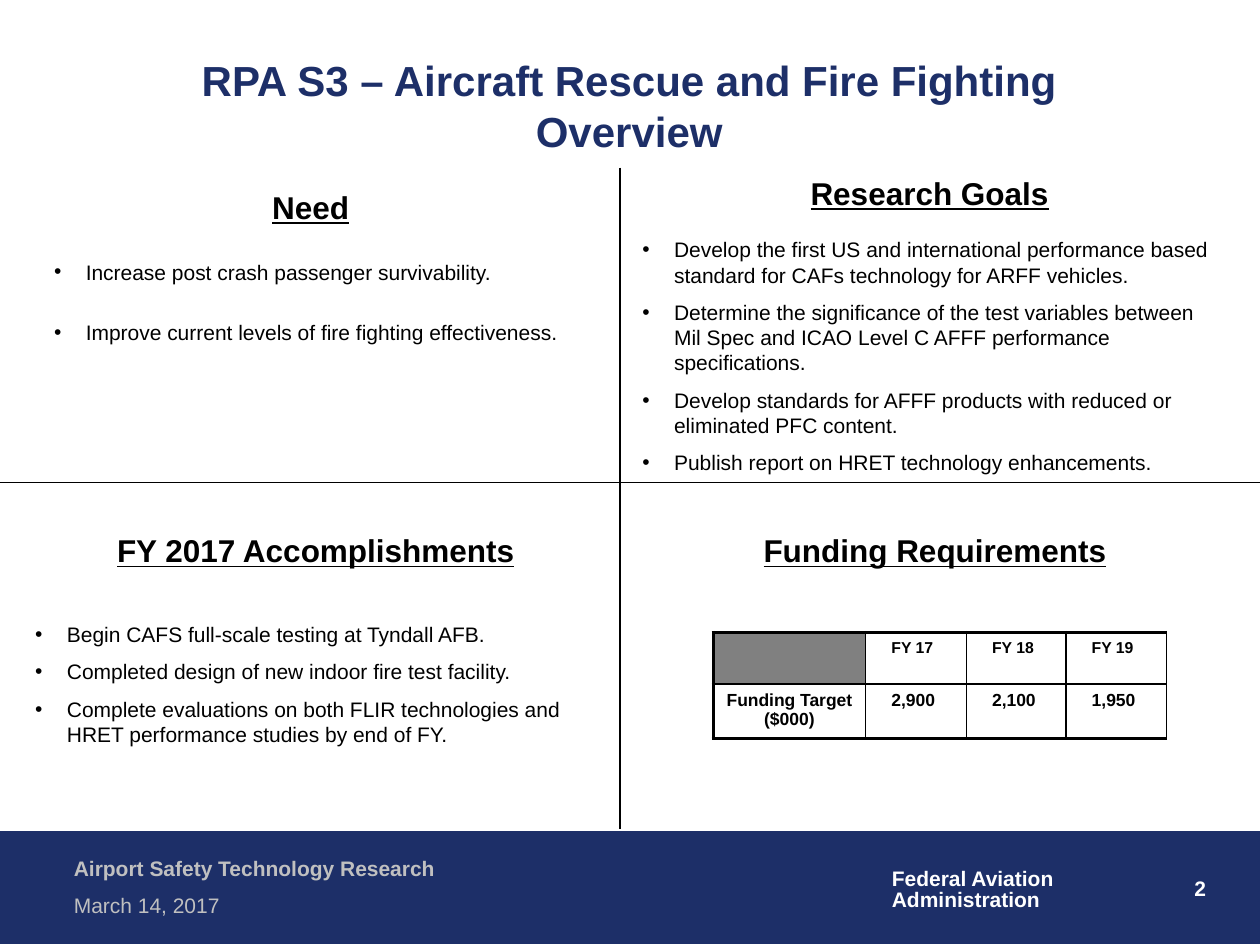
from typing import NamedTuple

from lxml.etree import SubElement
from pptx import Presentation
from pptx.dml.color import RGBColor
from pptx.enum.shapes import MSO_CONNECTOR, MSO_SHAPE
from pptx.enum.text import MSO_ANCHOR, MSO_AUTO_SIZE, PP_ALIGN
from pptx.oxml.ns import qn
from pptx.util import Cm, Pt

NAVY = RGBColor(0x1D, 0x2F, 0x68)
BLACK = RGBColor(0, 0, 0)
WHITE = RGBColor(0xFF, 0xFF, 0xFF)
SILVER = RGBColor(0xC0, 0xC0, 0xC0)
GRAY = RGBColor(0x80, 0x80, 0x80)
FONT = "Arial"
TITLE_ONLY = 5
THICK, THIN = 2.25, 1


class Box(NamedTuple):
    """A rectangle in centimetres."""
    left: float
    top: float
    width: float
    height: float

    def inner(self, dx, dy, width, height):
        return Box(self.left + dx, self.top + dy, width, height)

    def lengths(self):
        return [Cm(value) for value in self]


PAGE = Box(0, 0, 25.4, 19.05)
BODY_TOP, MIDDLE_X, MIDDLE_Y, BAND_TOP = 3.38, 12.5, 9.73, 16.76


def add_bullet(para):
    props = para._p.get_or_add_pPr()
    props.set("marL", str(Cm(0.64)))
    props.set("indent", str(-Cm(0.64)))
    SubElement(props, qn("a:buFont"), typeface=FONT)
    SubElement(props, qn("a:buChar"), char="•")


def write(frame, lines, size=12, color=BLACK, bold=False, underline=False,
          align=PP_ALIGN.LEFT, gap=0, spacing=None, bullet=False):
    """Fill a text frame with one paragraph for each line."""
    for index, line in enumerate(lines):
        para = frame.paragraphs[0] if index == 0 else frame.add_paragraph()
        para.text = line
        para.alignment = align
        para.space_before = Pt(gap if index else 0)
        if spacing:
            para.line_spacing = spacing
        if bullet:
            add_bullet(para)
        for span in para.runs:
            font = span.font
            font.name, font.size = FONT, Pt(size)
            font.bold, font.underline = bold, underline
            font.color.rgb = color


def add_text(page, box, *lines, wrap=True, **style):
    frame = page.shapes.add_textbox(*box.lengths()).text_frame
    frame.word_wrap = wrap
    write(frame, lines, **style)


def add_heading(page, box, text, align=PP_ALIGN.CENTER):
    add_text(page, box, text, size=18, bold=True, underline=True, align=align)


def add_title(page, box, text):
    title = page.shapes.title
    title.left, title.top, title.width, title.height = box.lengths()
    frame = title.text_frame
    frame.auto_size = MSO_AUTO_SIZE.NONE
    frame.vertical_anchor = MSO_ANCHOR.MIDDLE
    write(frame, [text], size=24, color=NAVY, bold=True, align=PP_ALIGN.CENTER)


def add_line(page, x1, y1, x2, y2):
    line = page.shapes.add_connector(
        MSO_CONNECTOR.STRAIGHT, Cm(x1), Cm(y1), Cm(x2), Cm(y2))
    line.line.color.rgb = BLACK
    line.line.width = Pt(0.75)
    SubElement(line._element.spPr, qn("a:effectLst"))


def add_footer(page, box):
    band = page.shapes.add_shape(MSO_SHAPE.RECTANGLE, *box.lengths())
    band.shadow.inherit = False
    band.fill.solid()
    band.fill.fore_color.rgb = NAVY
    band.line.color.rgb = NAVY
    band.line.width = Pt(0.75)
    add_text(page, box.inner(1.24, 0.36, 13.28, 0.76),
             "Airport Safety Technology Research", color=SILVER, bold=True)
    add_text(page, box.inner(1.24, 1.1, 10.39, 0.76), "March 14, 2017", color=SILVER)
    add_text(page, box.inner(17.73, 0.64, 3.81, 1.12), "Federal Aviation",
             "Administration", wrap=False, color=WHITE, bold=True, spacing=0.85)
    add_text(page, box.inner(19.28, 0.77, 5.28, 1.27), "2",
             color=WHITE, bold=True, align=PP_ALIGN.RIGHT)


def add_need(page, box):
    add_heading(page, box.inner(1.4, 0.28, 9.73, 0.85), "Need")
    add_text(page, box.inner(0.84, 1.72, 11.63, 2), 
             "Increase post crash passenger survivability.",
             "Improve current levels of fire fighting effectiveness.",
             bullet=True, gap=20)


def add_goals(page, box):
    add_heading(page, box.inner(0.84, 0, 10.8, 0.85), "Research Goals")
    add_text(page, box.inner(0.2, 1.27, 12.27, 4.62),
             "Develop the first US and international performance based "
             "standard for CAFs technology for ARFF vehicles.",
             "Determine the significance of the test variables between "
             "Mil Spec and ICAO Level C AFFF performance specifications.",
             "Develop standards for AFFF products with reduced or "
             "eliminated PFC content.",
             "Publish report on HRET technology enhancements.",
             bullet=True, gap=7)


def add_accomplishments(page, box):
    add_heading(page, box.inner(2.11, 0.86, 10.59, 0.97),
                "FY 2017 Accomplishments", align=PP_ALIGN.LEFT)
    add_text(page, box.inner(0.46, 2.67, 11.63, 2.82),
             "Begin CAFS full-scale testing at Tyndall AFB.",
             "Completed design of new indoor fire test facility.",
             "Complete evaluations on both FLIR technologies and "
             "HRET performance studies by end of FY.",
             bullet=True, gap=7)


def set_borders(cell, **widths):
    """Draw black borders; the keys are L, R, T and B, in that order."""
    props = cell._tc.get_or_add_tcPr()
    for side, width in widths.items():
        line = SubElement(props, qn(f"a:ln{side}"), w=str(Pt(width)))
        fill = SubElement(line, qn("a:solidFill"))
        SubElement(fill, qn("a:srgbClr"), val=str(BLACK))


def add_funding(page, box):
    add_heading(page, box.inner(0.84, 0.86, 11.02, 1.37), "Funding Requirements")
    rows = [["", "FY 17", "FY 18", "FY 19"],
            ["Funding Target ($000)", "2,900", "2,100", "1,950"]]
    widths, heights = [3.07, 2.03, 2.01, 2.03], [1.04, 1.09]
    area = box.inner(1.88, 3.02, sum(widths), sum(heights))
    table = page.shapes.add_table(len(rows), len(widths), *area.lengths()).table
    table.first_row = table.horz_banding = False
    for column, width in zip(table.columns, widths):
        column.width = Cm(width)
    for r, (texts, height) in enumerate(zip(rows, heights)):
        table.rows[r].height = Cm(height)
        for c, text in enumerate(texts):
            cell = table.cell(r, c)
            set_borders(cell, L=THIN if c else THICK, R=THIN,
                        T=THIN if r else THICK, B=THICK if r else THIN)
            if text:
                cell.fill.background()
                write(cell.text_frame, [text], size=10 if r else 9, bold=True,
                      align=PP_ALIGN.LEFT if c else PP_ALIGN.CENTER)
            else:
                cell.fill.solid()
                cell.fill.fore_color.rgb = GRAY
            cell.margin_left = Cm(0.52 if c else 0.25)


def main():
    deck = Presentation()
    deck.slide_width, deck.slide_height = Cm(PAGE.width), Cm(PAGE.height)
    page = deck.slides.add_slide(deck.slide_layouts[TITLE_ONLY])
    right_width = PAGE.width - MIDDLE_X
    upper, lower = MIDDLE_Y - BODY_TOP, BAND_TOP - MIDDLE_Y

    add_footer(page, Box(0, BAND_TOP, PAGE.width, 2.26))
    add_title(page, Box(0.91, 1.27, 23.55, 1.7),
              "RPA S3 – Aircraft Rescue and Fire Fighting\vOverview")
    add_line(page, MIDDLE_X, BODY_TOP, MIDDLE_X, 16.71)
    add_line(page, 0, MIDDLE_Y, PAGE.width, MIDDLE_Y)
    add_need(page, Box(0, BODY_TOP, MIDDLE_X, upper))
    add_goals(page, Box(MIDDLE_X, BODY_TOP, right_width, upper))
    add_accomplishments(page, Box(0, MIDDLE_Y, MIDDLE_X, lower))
    add_funding(page, Box(MIDDLE_X, MIDDLE_Y, right_width, lower))
    deck.save("out.pptx")


if __name__ == "__main__":
    main()
